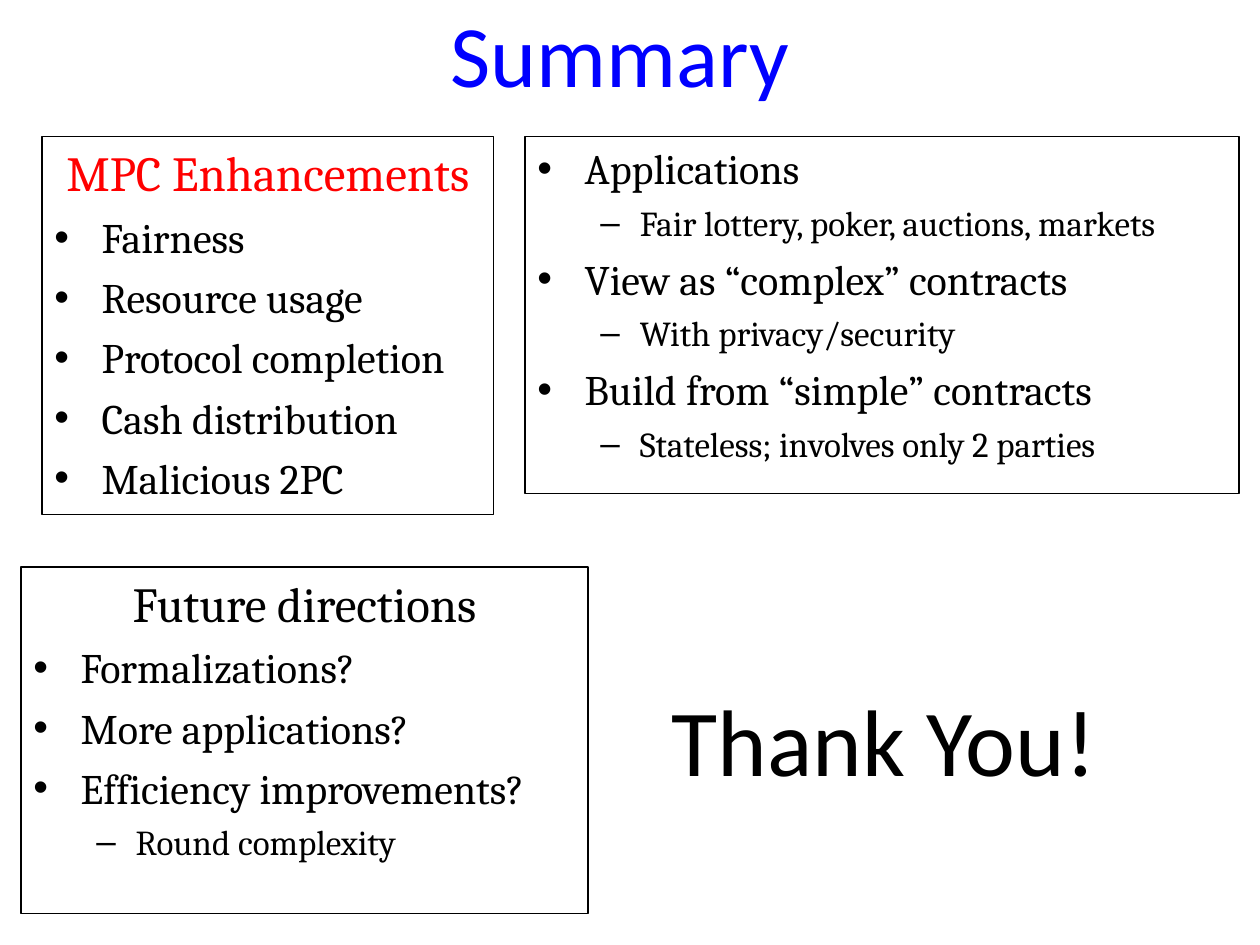
import pptx
import pptx.util
import pptx.dml.color
import pptx.enum.shapes
import pptx.enum.text
import lxml.etree

Pt = pptx.util.Pt
Align = pptx.enum.text.PP_ALIGN
Anchor = pptx.enum.text.MSO_ANCHOR
NS = "{http://schemas.openxmlformats.org/drawingml/2006/main}"


def tint(code):
    return pptx.dml.color.RGBColor.from_string(code)


def style(para, text, size, face, code):
    para.text = text
    para.font.size = Pt(size)
    para.font.name = face
    para.font.color.rgb = tint(code)


deck = pptx.Presentation()
deck.slide_width = Pt(720)
deck.slide_height = Pt(540)
slide = deck.slides.add_slide(deck.slide_layouts[6])

lines = [
    ("Summary ", 50, "0000FF", Align.CENTER, Anchor.MIDDLE, 0, (0, -12, 720, 83.5)),
    ("Thank You!", 54, "000000", Align.LEFT, Anchor.TOP, 7.8, (384, 390, 258, 84)),
]
for text, size, code, align, anchor, gap, spot in lines:
    frame = slide.shapes.add_textbox(*map(Pt, spot)).text_frame
    frame.word_wrap = True
    frame.vertical_anchor = anchor
    frame.margin_left = frame.margin_right = 0
    frame.margin_top = frame.margin_bottom = 0
    para = frame.paragraphs[0]
    style(para, text, size, "Calibri", code)
    para.alignment = align
    para.space_before = Pt(gap)

kinds = {
    "head": (28, None, 0, 0, 0),
    "item": (24, "•", 27, -27, 0),
    "sub": (20, "–", 58.5, -22.5, 1),
}
panels = [
    ((24, 78, 258, 216), "FF0000", [
        ("head", "MPC Enhancements"),
        ("item", "Fairness"),
        ("item", "Resource usage"),
        ("item", "Protocol completion"),
        ("item", "Cash distribution"),
        ("item", "Malicious 2PC"),
    ]),
    ((12, 324, 324, 198), "000000", [
        ("head", "Future directions"),
        ("item", "Formalizations?"),
        ("item", "More applications?"),
        ("item", "Efficiency improvements?"),
        ("sub", "Round complexity"),
    ]),
    ((300, 78, 408, 204), "000000", [
        ("item", "Applications"),
        ("sub", "Fair lottery, poker, auctions, markets"),
        ("item", "View as “complex” contracts"),
        ("sub", "With privacy/security"),
        ("item", "Build from “simple” contracts"),
        ("sub", "Stateless; involves only 2 parties"),
    ]),
]
for spot, code, rows in panels:
    box = slide.shapes.add_shape(
        pptx.enum.shapes.MSO_SHAPE.RECTANGLE, *map(Pt, spot))
    box.shadow.inherit = False
    box.fill.background()
    box.line.color.rgb = tint("000000")
    box.line.width = Pt(0.75)
    frame = box.text_frame
    frame.word_wrap = True
    frame.vertical_anchor = Anchor.TOP
    for spot, (kind, text) in enumerate(rows):
        para = frame.add_paragraph() if spot else frame.paragraphs[0]
        size, mark, left, hang, level = kinds[kind]
        style(para, text, size, "Cambria", code if kind == "head" else "000000")
        para.alignment = Align.LEFT if mark else Align.CENTER
        para.level = level
        para.space_before = Pt(round(size * 0.235, 1))
        if mark:
            props = para._p.get_or_add_pPr()
            props.set("marL", str(Pt(left)))
            props.set("indent", str(Pt(hang)))
            lxml.etree.SubElement(props, NS + "buFont", typeface="Arial")
            lxml.etree.SubElement(props, NS + "buChar", char=mark)

deck.save("out.pptx")
